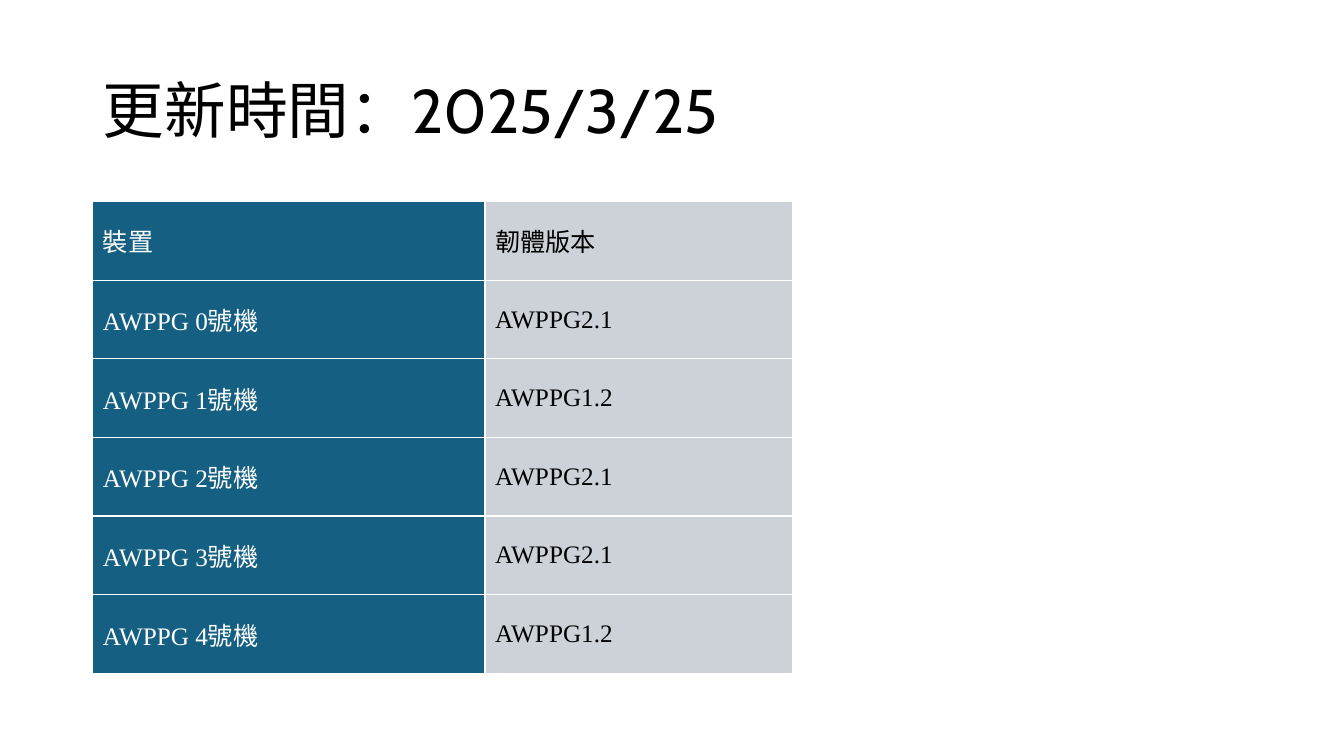
from lxml import etree
from pptx import Presentation
from pptx.dml.color import RGBColor
from pptx.enum.text import MSO_ANCHOR, PP_ALIGN
from pptx.oxml.ns import qn
from pptx.util import Inches, Pt

MIDDLE = MSO_ANCHOR.MIDDLE
LEFT = PP_ALIGN.LEFT

# Content
TITLE = "更新時間：2025/3/25"
HEADER = ("裝置", "韌體版本")
VERSIONS = ["AWPPG2.1", "AWPPG1.2", "AWPPG2.1", "AWPPG2.1", "AWPPG1.2"]
ROWS = [HEADER] + [(f"AWPPG {n}號機", v) for n, v in enumerate(VERSIONS)]

# Style
COLORS = {"white": "FFFFFF", "black": "000000", "teal": "156082", "gray": "CCD2D8"}
COLUMNS = [(3.89, "teal", "white"), (3.05, "gray", "black")]  # width, fill, text
ROW_HEIGHT = 0.78
MARGIN = 0.92


def rgb(name):
    return RGBColor.from_string(COLORS[name])


def add_run(p, text, font, size, color):
    r = p.add_run()
    r.text = text
    r.font.name = font
    r.font.size = Pt(size)
    r.font.color.rgb = rgb(color)


def add_borders(cell, color):
    # Borders come before the fill in the cell properties
    tc_pr = cell._tc.get_or_add_tcPr()
    for i, side in enumerate(("a:lnL", "a:lnR", "a:lnT", "a:lnB")):
        ln = etree.Element(qn(side), w=str(Pt(1)))
        fill = etree.SubElement(ln, qn("a:solidFill"))
        etree.SubElement(fill, qn("a:srgbClr"), val=COLORS[color])
        tc_pr.insert(i, ln)


prs = Presentation()
prs.slide_width, prs.slide_height = Inches(13.33), Inches(7.5)
slide = prs.slides.add_slide(prs.slide_layouts[5])

# Title
title = slide.shapes.title
title.left, title.top = Inches(MARGIN), Inches(0.4)
title.width, title.height = Inches(11.5), Inches(1.45)
tf = title.text_frame
tf.vertical_anchor = MIDDLE
p = tf.paragraphs[0]
p.alignment = LEFT
p.line_spacing = 0.9
add_run(p, TITLE, "Cabin", 44, "black")

# Firmware table
table = slide.shapes.add_table(
    len(ROWS), len(COLUMNS), Inches(MARGIN), Inches(2),
    Inches(sum(width for width, _, _ in COLUMNS)), Inches(ROW_HEIGHT * len(ROWS))).table
for column, (width, _, _) in zip(table.columns, COLUMNS):
    column.width = Inches(width)
for row, texts in zip(table.rows, ROWS):
    row.height = Inches(ROW_HEIGHT)
    for cell, text, (_, fill, color) in zip(row.cells, texts, COLUMNS):
        cell.fill.solid()
        cell.fill.fore_color.rgb = rgb(fill)
        cell.vertical_anchor = MIDDLE
        add_borders(cell, "white")
        p = cell.text_frame.paragraphs[0]
        add_run(p, text, "Times New Roman", 18, color)
        p.runs[0].font.bold = False

prs.save("out.pptx")
